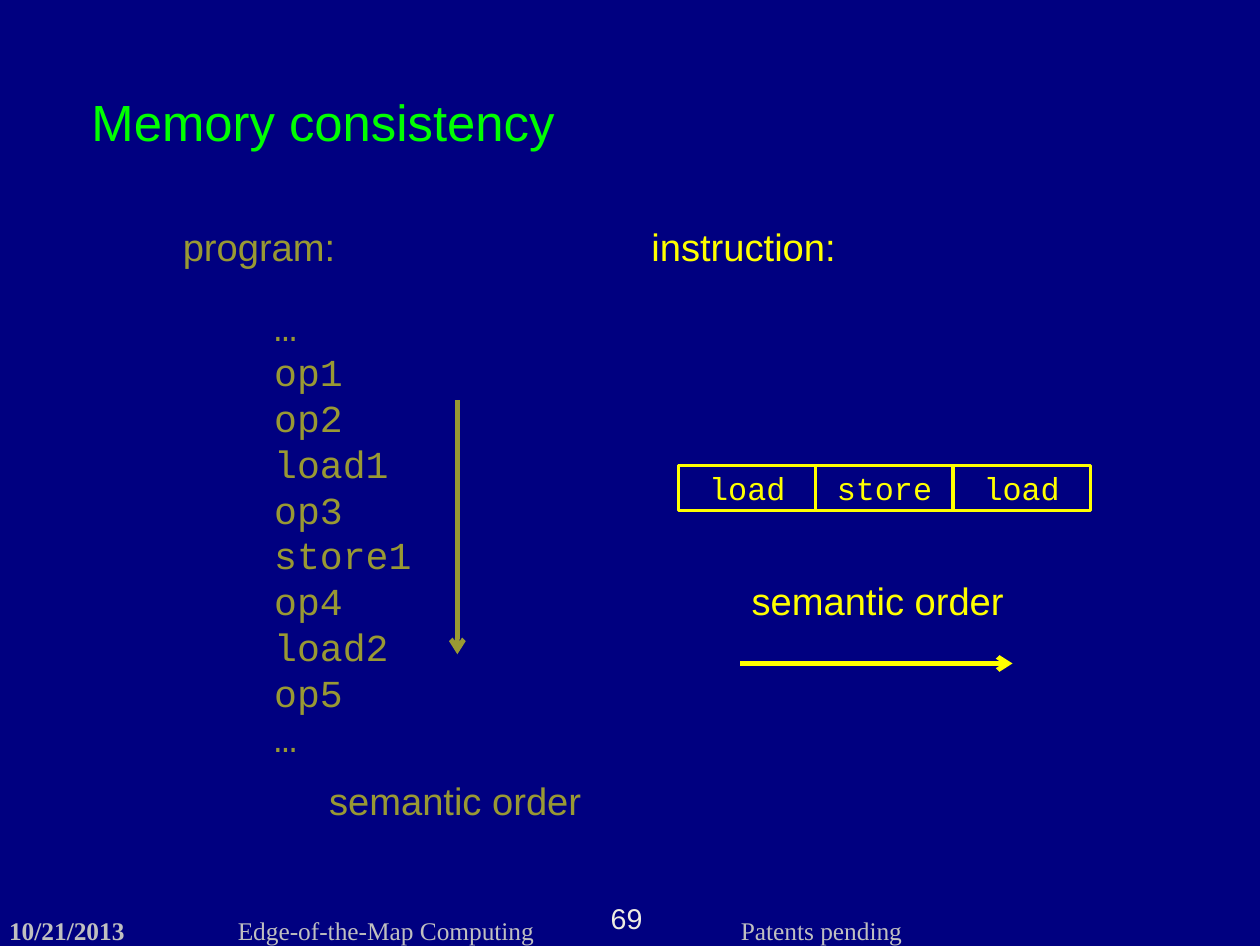
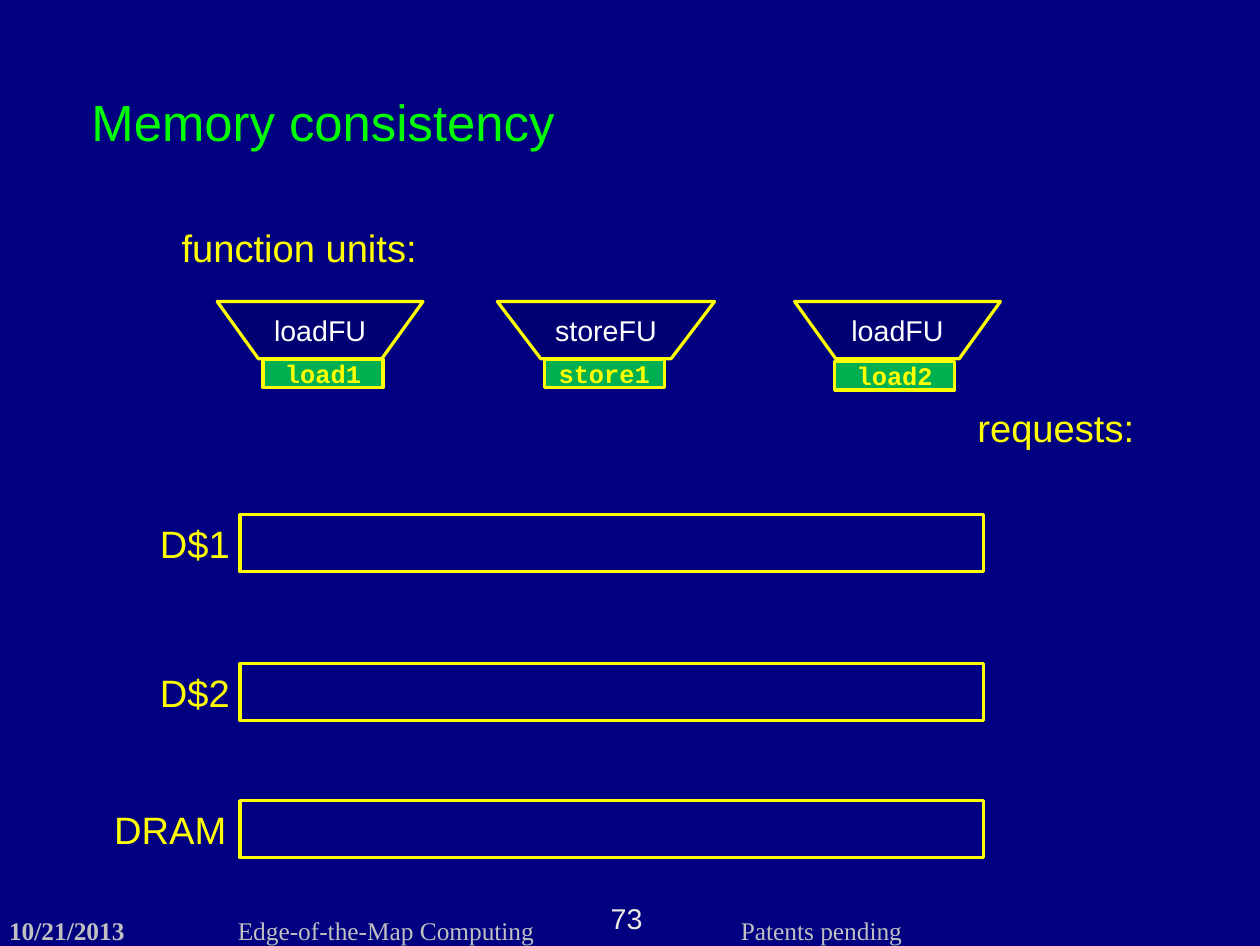
from lxml import etree
from pptx import Presentation
from pptx.dml.color import RGBColor
from pptx.enum.shapes import MSO_CONNECTOR, MSO_SHAPE
from pptx.enum.text import MSO_ANCHOR, PP_ALIGN
from pptx.oxml.ns import qn
from pptx.util import Pt

RECTANGLE = MSO_SHAPE.RECTANGLE
FUNNEL = MSO_SHAPE.FLOWCHART_MANUAL_OPERATION
STRAIGHT = MSO_CONNECTOR.STRAIGHT
MIDDLE, TOP = MSO_ANCHOR.MIDDLE, MSO_ANCHOR.TOP
LEFT, CENTER = PP_ALIGN.LEFT, PP_ALIGN.CENTER

NAVY = RGBColor(0x00, 0x00, 0x80)
DARK_NAVY = RGBColor(0x00, 0x00, 0x66)
YELLOW = RGBColor(0xFF, 0xFF, 0x00)
LIME = RGBColor(0x00, 0xFF, 0x00)
GREEN = RGBColor(0x00, 0xB0, 0x50)
SILVER = RGBColor(0xC0, 0xC0, 0xC0)
IVORY = RGBColor(0xEE, 0xEC, 0xE1)
WHITE = RGBColor(0xFF, 0xFF, 0xFF)

SANS, MONO, SERIF = "Arial", "Courier New", "Times New Roman"


def write(frame, lines, size, color, font=SANS, bold=False, align=LEFT):
    """Fill a text frame with one paragraph per line, all in one style."""
    for index, line in enumerate(lines):
        para = frame.add_paragraph() if index else frame.paragraphs[0]
        para.text = line
        para.alignment = align
        para.font.name = font
        para.font.size = Pt(size)
        para.font.bold = bold
        para.font.color.rgb = color


def add_text(page, lines, left, top, width, height=36, size=24, color=YELLOW,
             inset=(7.2, 3.6), wrap=False, anchor=TOP, **style):
    box = page.shapes.add_textbox(Pt(left), Pt(top), Pt(width), Pt(height))
    frame = box.text_frame
    frame.word_wrap = wrap
    frame.vertical_anchor = anchor
    frame.margin_left = frame.margin_right = Pt(inset[0])
    frame.margin_top = frame.margin_bottom = Pt(inset[1])
    write(frame, lines, size, color, **style)


def add_block(page, left, top, width, height, kind=RECTANGLE, fill=None,
              opacity=None, outline=YELLOW, text=None, size=20, color=YELLOW,
              **style):
    block = page.shapes.add_shape(kind, Pt(left), Pt(top), Pt(width), Pt(height))
    block.shadow.inherit = False
    if fill is None:
        block.fill.background()
    else:
        block.fill.solid()
        block.fill.fore_color.rgb = fill
    if opacity is not None:
        tint = block.element.spPr.find(qn("a:solidFill")).find(qn("a:srgbClr"))
        etree.SubElement(tint, qn("a:alpha"), val=str(opacity * 1000))
    if outline is None:
        block.line.fill.background()
    else:
        block.line.color.rgb = outline
        block.line.width = Pt(2)
    if text:
        block.text_frame.vertical_anchor = MIDDLE
        write(block.text_frame, [text], size, color, align=CENTER, **style)


def add_arrow(page, x1, y1, x2, y2):
    arrow = page.shapes.add_connector(STRAIGHT, Pt(x1), Pt(y1), Pt(x2), Pt(y2))
    arrow.line.color.rgb = YELLOW
    arrow.line.width = Pt(3)
    properties = arrow.element.spPr
    etree.SubElement(properties.find(qn("a:ln")), qn("a:tailEnd"), type="arrow")
    etree.SubElement(properties, qn("a:effectLst"))


def add_page(deck, number):
    """Add a slide with the shared title and footer."""
    page = deck.slides.add_slide(deck.slide_layouts[6])
    footer = dict(top=576, height=18, size=16, color=SILVER, font=SERIF,
                  inset=(0, 0), wrap=True)
    add_text(page, ["10/21/2013"], left=5.76, width=100, bold=True, **footer)
    add_text(page, ["Edge-of-the-Map Computing"], left=149.76, width=225, **footer)
    add_text(page, ["Patents pending"], left=466.56, width=125, **footer)
    add_text(page, [str(number)], 383.4, 567, 22.32, 20.88, 18, IVORY,
             inset=(0, 0), align=CENTER)
    add_text(page, ["Memory consistency"], 57.6, 58.6, 468, 36, 32, LIME,
             inset=(0, 2.16), wrap=True, anchor=MIDDLE)
    return page


def build_order_page(deck):
    page = add_page(deck, 69)

    # Program, listed from top to bottom
    add_text(page, ["program:"], 108, 136.8, 111.6)
    program = ["…", "op1", "op2", "load1", "op3", "store1", "op4", "load2",
               "op5", "…"]
    add_text(page, program, 165.6, 187.2, 101.5, 298, font=MONO)
    add_text(page, ["semantic order"], 200.16, 486, 175)
    add_arrow(page, 288, 252, 288, 411.84)

    # Instruction, read from left to right
    add_text(page, ["instruction:"], 403.2, 136.8, 131.8)
    slot_width = 86.4
    for index, operation in enumerate(["load", "store", "load"]):
        add_block(page, 427.4 + index * slot_width, 292.8, slot_width, 28.8,
                  text=operation, font=MONO)
    add_text(page, ["semantic order"], 466.2, 360, 175)
    add_arrow(page, 466.2, 417.6, 637.6, 417.6)

    # Veil that dims the program
    add_block(page, 54, 115.92, 331.92, 440.64, fill=NAVY, opacity=40,
              outline=None)


def build_units_page(deck):
    page = add_page(deck, 73)

    # Function units, each with the request it issues
    add_text(page, ["function units:"], 107.28, 137.52, 164.16)
    add_text(page, ["requests:"], 608.4, 251.28, 114.5)
    units = [
        ("loadFU", 136.8, 129.6, "load1", 165.6, 226.08),
        ("storeFU", 313.2, 136.8, "store1", 342.72, 226.08),
        ("loadFU", 500.4, 129.6, "load2", 525.6, 227.52),
    ]
    for unit, left, width, request, request_left, request_top in units:
        add_block(page, left, 189.8, width, 36, kind=FUNNEL, fill=DARK_NAVY,
                  opacity=50, text=unit, size=18, color=WHITE)
        add_block(page, request_left, request_top, 75.6, 18, fill=GREEN,
                  text=request, size=16, font=MONO, bold=True)

    # Memory levels
    levels = [("D$1", 93.6, 59, 324), ("D$2", 93.6, 59, 417.6),
              ("DRAM", 64.8, 85.7, 504)]
    for level, left, width, top in levels:
        add_block(page, 151.2, top, 468, 36)
        add_text(page, [level], left, top, width)


def main():
    deck = Presentation()
    deck.slide_width, deck.slide_height = Pt(793.44), Pt(595.44)
    backdrop = deck.slide_master.background.fill
    backdrop.solid()
    backdrop.fore_color.rgb = NAVY
    build_order_page(deck)
    build_units_page(deck)
    deck.save("out.pptx")


if __name__ == "__main__":
    main()
